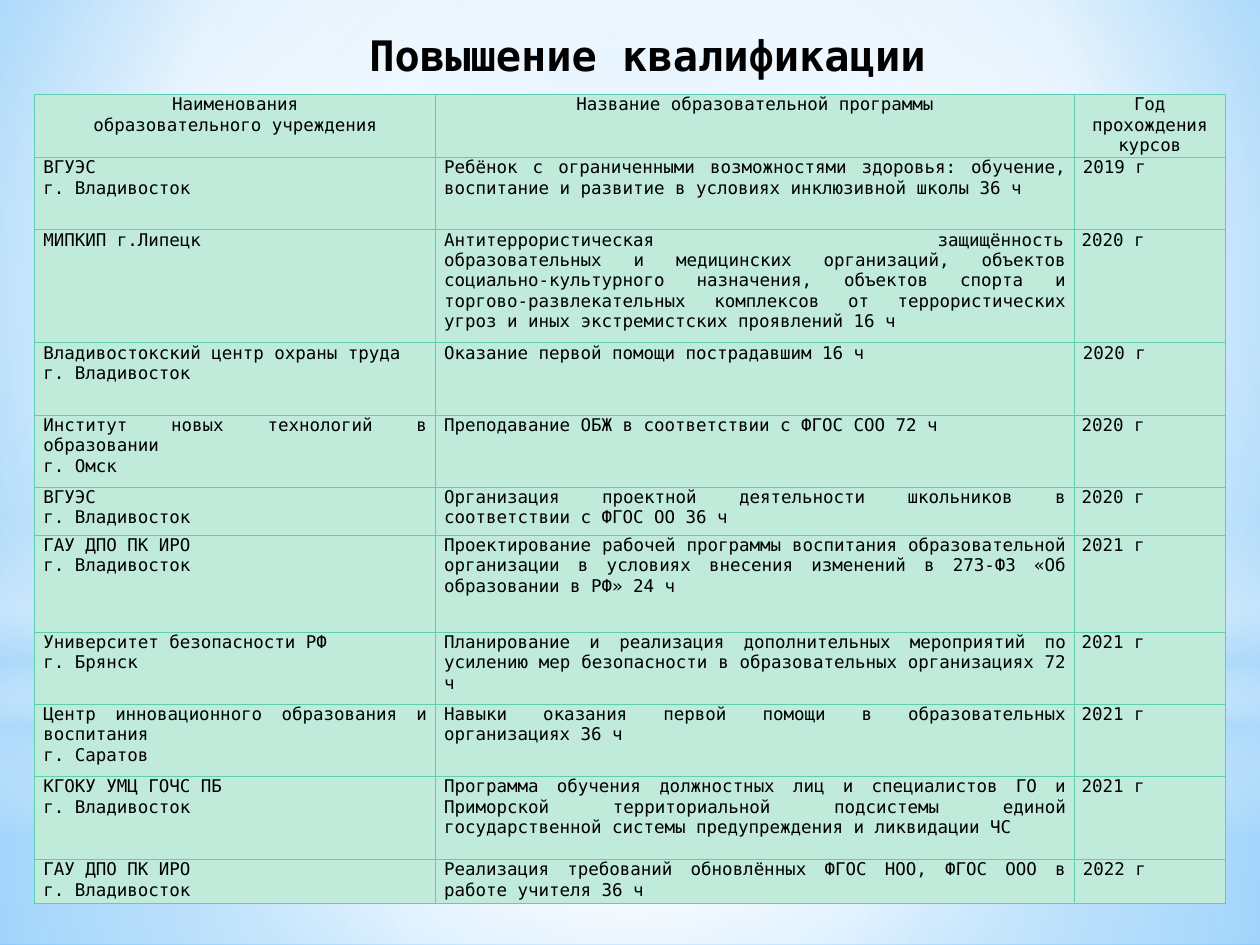
from dataclasses import dataclass

import lxml.etree
import pptx
import pptx.dml.color
import pptx.enum.shapes
import pptx.enum.text
import pptx.oxml
import pptx.oxml.ns
import pptx.util

Pt = pptx.util.Pt
ALIGN = pptx.enum.text.PP_ALIGN
SHAPE = pptx.enum.shapes.MSO_SHAPE
FONT = "DejaVu Sans Mono"
COLORS = {
    "text": "000000",
    "cell": "C0EADA",
    "border": "5DCEAF",
    "white": "FFFFFF",
    "mist": "B4DCFA",
    "sky": "9ED5FF",
    "blue": "5BB9FF",
}
WIDE_INSET, NARROW_INSET = 5, 4.3


@dataclass
class Gradient:
    stops: list[tuple[int, str, int]]  # position %, colour, opacity %
    focus: tuple[int, int, int, int] | None = (50, 50, 50, 50)  # None: vertical


@dataclass
class Panel:
    shape: SHAPE
    top: float
    height: float
    gradient: Gradient


@dataclass
class Course:
    height: float
    school: str
    program: str
    year: str
    year_inset: float = NARROW_INSET


BACKGROUND = Gradient([(0, "sky", 100), (60, "white", 100), (100, "blue", 100)], (20, 10, 20, 60))
PANELS = [
    Panel(SHAPE.RECTANGLE, 402, 138,
          Gradient([(0, "white", 91), (37, "white", 76), (100, "mist", 79)])),
    Panel(SHAPE.RECTANGLE, 0, 402,
          Gradient([(0, "white", 89), (48, "white", 62), (100, "mist", 79)])),
    Panel(SHAPE.RECTANGLE, 297, 180,
          Gradient([(0, "white", 0), (29, "white", 30), (45, "mist", 40),
                    (55, "white", 26), (65, "mist", 60), (100, "white", 0)], None)),
    Panel(SHAPE.OVAL, 126, 402, Gradient([(0, "white", 100), (56, "white", 0)])),
]

COLUMNS = [229, 365, 86.4]
HEADER_HEIGHT = 25.2
HEADERS = ["Наименования\nобразовательного учреждения",
           "Название образовательной программы", "Год прохождения курсов"]
COURSES = [
    Course(41.3, "ВГУЭС\nг. Владивосток",
           "Ребёнок с ограниченными возможностями здоровья: обучение, воспитание и развитие "
           "в условиях инклюзивной школы 36 ч", "2019 г", WIDE_INSET),
    Course(64.6, "МИПКИП г.Липецк",
           "Антитеррористическая\tзащищённость\v"
           "образовательных и медицинских организаций, объектов социально-культурного "
           "назначения, объектов спорта и торгово-развлекательных комплексов от "
           "террористических угроз и иных экстремистских проявлений 16 ч", "2020 г"),
    Course(41.3, "Владивостокский центр охраны труда\nг. Владивосток",
           "Оказание первой помощи пострадавшим 16 ч", "2020 г", WIDE_INSET),
    Course(41.3, "Институт новых технологий в образовании\nг. Омск",
           "Преподавание ОБЖ в соответствии с ФГОС СОО 72 ч", "2020 г"),
    Course(27.4, "ВГУЭС\nг. Владивосток",
           "Организация проектной деятельности школьников в соответствии с ФГОС ОО 36 ч",
           "2020 г"),
    Course(55.4, "ГАУ ДПО ПК ИРО\nг. Владивосток",
           "Проектирование рабочей программы воспитания образовательной организации "
           "в условиях внесения изменений в 273-ФЗ «Об образовании в РФ» 24 ч", "2021 г"),
    Course(41.3, "Университет безопасности РФ\nг. Брянск",
           "Планирование и реализация дополнительных мероприятий по усилению мер "
           "безопасности в образовательных организациях 72 ч", "2021 г"),
    Course(41.3, "Центр инновационного образования и воспитания\nг. Саратов",
           "Навыки оказания первой помощи в образовательных организациях 36 ч", "2021 г"),
    Course(47.5, "КГОКУ УМЦ ГОЧС ПБ\nг. Владивосток",
           "Программа обучения должностных лиц и специалистов ГО и Приморской "
           "территориальной подсистемы единой государственной системы предупреждения "
           "и ликвидации ЧС", "2021 г"),
    Course(25.2, "ГАУ ДПО ПК ИРО\nг. Владивосток",
           "Реализация требований обновлённых ФГОС НОО, ФГОС ООО в работе учителя 36 ч",
           "2022 г", WIDE_INSET),
]


def rgb(name: str):
    return pptx.dml.color.RGBColor.from_string(COLORS[name])


def xml(body: str):
    tag_end = min(i for i in (body.find(" "), body.find(">")) if i > 0)
    return pptx.oxml.parse_xml(body[:tag_end] + " " + pptx.oxml.ns.nsdecls("a") + body[tag_end:])


def set_gradient(parent, gradient: Gradient) -> None:
    """Swap the solid fill directly under parent for a gradient."""
    stops = "".join(
        f'<a:gs pos="{pos * 1000}"><a:srgbClr val="{COLORS[color]}">'
        f'<a:alpha val="{alpha * 1000}"/></a:srgbClr></a:gs>'
        for pos, color, alpha in gradient.stops)
    if gradient.focus:
        left, top, right, bottom = (v * 1000 for v in gradient.focus)
        kind = (f'<a:path path="circle"><a:fillToRect l="{left}" t="{top}" '
                f'r="{right}" b="{bottom}"/></a:path>')
    else:
        kind = '<a:lin ang="5400000" scaled="0"/>'
    solid = parent.find(pptx.oxml.ns.qn("a:solidFill"))
    parent.replace(solid, xml(f'<a:gradFill rotWithShape="1"><a:gsLst>{stops}</a:gsLst>{kind}</a:gradFill>'))


def add_panel(s, panel: Panel) -> None:
    sp = s.shapes.add_shape(panel.shape, Pt(0), Pt(panel.top), Pt(720), Pt(panel.height))
    sp.shadow.inherit = False
    sp.line.fill.background()
    sp.fill.solid()
    set_gradient(sp.element.spPr, panel.gradient)


def add_run(p, text: str, size: float, bold: bool = False) -> None:
    r = p.add_run()
    r.text = text
    r.font.name, r.font.size, r.font.bold = FONT, Pt(size), bold
    r.font.color.rgb = rgb("text")


def fill_cell(cell, text: str, align, inset: float, width: float) -> None:
    cell.margin_left = cell.margin_right = Pt(inset)
    cell.margin_top = cell.margin_bottom = Pt(0)
    cell.fill.solid()
    cell.fill.fore_color.rgb = rgb("cell")
    tc_pr = cell._tc.get_or_add_tcPr()
    for i, side in enumerate("LRTB"):
        tc_pr.insert(i, xml(f'<a:ln{side} w="9525"><a:solidFill><a:srgbClr '
                            f'val="{COLORS["border"]}"/></a:solidFill></a:ln{side}>'))
    tf = cell.text_frame
    for i, line in enumerate(text.split("\n")):
        p = tf.add_paragraph() if i else tf.paragraphs[0]
        p.alignment = align
        if "\t" in line:  # push the last word to the right edge
            stop = int(Pt(width - 2 * inset - 1))
            p._p.get_or_add_pPr().append(
                xml(f'<a:tabLst><a:tab pos="{stop}" algn="r"/></a:tabLst>'))
        for j, part in enumerate(line.split("\v")):
            if j:
                p.add_line_break()
            add_run(p, part, 10)


def add_courses(s) -> None:
    heights = [HEADER_HEIGHT] + [c.height for c in COURSES]
    table = s.shapes.add_table(len(heights), len(COLUMNS), Pt(19.8), Pt(54),
                               Pt(sum(COLUMNS)), Pt(sum(heights))).table
    for column, width in zip(table.columns, COLUMNS):
        column.width = Pt(width)
    for row, height in zip(table.rows, heights):
        row.height = Pt(height)
    for i, text in enumerate(HEADERS):
        fill_cell(table.cell(0, i), text, ALIGN.CENTER, NARROW_INSET, COLUMNS[i])
    for n, c in enumerate(COURSES, 1):
        insets = [WIDE_INSET, WIDE_INSET, c.year_inset]
        for i, text in enumerate([c.school, c.program, c.year]):
            fill_cell(table.cell(n, i), text, ALIGN.JUSTIFY, insets[i], COLUMNS[i])


def main() -> None:
    prs = pptx.Presentation()
    prs.slide_width, prs.slide_height = Pt(720), Pt(540)
    s = prs.slides.add_slide(prs.slide_layouts[6])

    # Background
    s.background.fill.solid()
    set_gradient(s.element.find(".//" + pptx.oxml.ns.qn("p:bgPr")), BACKGROUND)
    for panel in PANELS:
        add_panel(s, panel)

    # Title
    tf = s.shapes.add_textbox(Pt(36.7), Pt(9.4), Pt(666.7), Pt(39.6)).text_frame
    tf.word_wrap = True
    tf.vertical_anchor = pptx.enum.text.MSO_ANCHOR.BOTTOM
    tf.paragraphs[0].alignment = ALIGN.CENTER
    add_run(tf.paragraphs[0], "Повышение квалификации", 24, bold=True)

    # Course table
    add_courses(s)
    prs.save("out.pptx")


if __name__ == "__main__":
    main()
